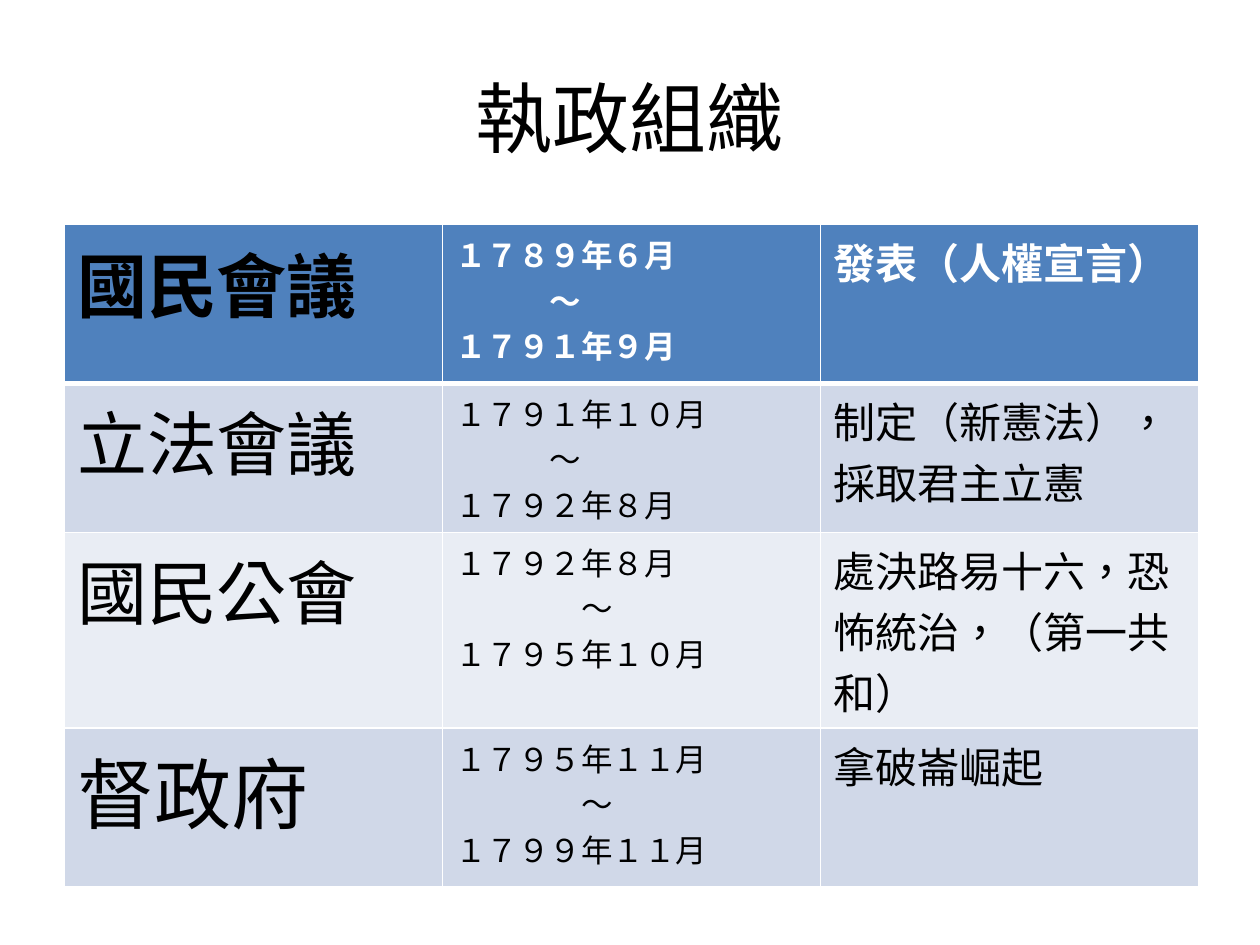
from dataclasses import dataclass

from lxml import etree
from pptx import Presentation
from pptx.dml.color import RGBColor
from pptx.enum import text
from pptx.oxml import ns
from pptx.util import Cm, Pt


@dataclass(frozen=True)
class Theme:
    font: str = "Noto Sans CJK SC"
    language: str = "zh-TW"
    black: str = "000000"
    white: str = "FFFFFF"
    header_fill: str = "4F81BD"
    band_fills: tuple = ("D0D8E8", "E9EDF4")
    title_size: int = 44
    name_size: int = 40
    last_name_size: int = 44
    date_size: int = 18
    event_size: int = 24
    border: int = 1
    header_border: int = 3


THEME = Theme()
ROWS = [
    ("國民會議", "１７８９年６月", "１７９１年９月", "發表（人權宣言）"),
    ("立法會議", "１７９１年１０月", "１７９２年８月", "制定（新憲法），採取君主立憲"),
    ("國民公會", "１７９２年８月", "１７９５年１０月", "處決路易十六，恐怖統治，（第一共和）"),
    ("督政府", "１７９５年１１月", "１７９９年１１月", "拿破崙崛起"),
]
ROW_HEIGHTS = (3.2, 3.0, 3.95, 3.2)
TILDE_INDENTS = (3, 3, 4, 4)


def format_text(text_frame, size, color, bold=False):
    for paragraph in text_frame.paragraphs:
        for run in paragraph.runs:
            run.font.size = Pt(size)
            run.font.bold = bold
            run.font.name = THEME.font
            run.font.color.rgb = RGBColor.from_string(color)
            properties = run.font._element
            properties.set("lang", THEME.language)
            east_asian = etree.SubElement(properties, ns.qn("a:ea"))
            east_asian.set("typeface", THEME.font)


def add_title(slide, title):
    shape = slide.shapes.add_textbox(Cm(1.27), Cm(0.76), Cm(22.86), Cm(3.18))
    text_frame = shape.text_frame
    text_frame.word_wrap = True
    text_frame.vertical_anchor = text.MSO_ANCHOR.MIDDLE
    text_frame.text = title
    text_frame.paragraphs[0].alignment = text.PP_ALIGN.CENTER
    format_text(text_frame, THEME.title_size, THEME.black)


def set_borders(cell, top, bottom):
    properties = cell._tc.get_or_add_tcPr()
    widths = {"L": THEME.border, "R": THEME.border, "T": top, "B": bottom}
    for side, width in widths.items():
        line = etree.SubElement(properties, ns.qn(f"a:ln{side}"), w=str(Pt(width)))
        fill = etree.SubElement(line, ns.qn("a:solidFill"))
        etree.SubElement(fill, ns.qn("a:srgbClr"), val=THEME.white)


def style_cell(cell, row_index):
    top = THEME.header_border if row_index == 1 else THEME.border
    bottom = THEME.header_border if row_index == 0 else THEME.border
    set_borders(cell, top, bottom)
    color = THEME.band_fills[(row_index - 1) % 2] if row_index else THEME.header_fill
    cell.fill.solid()
    cell.fill.fore_color.rgb = RGBColor.from_string(color)


def indent_paragraph(paragraph, characters):
    properties = paragraph._p.get_or_add_pPr()
    properties.set("marL", str(Pt(characters * THEME.date_size)))
    properties.set("indent", "0")


def fill_row(cells, row_index, content):
    name, start, end, event = content
    is_header = row_index == 0
    text_color = THEME.white if is_header else THEME.black
    is_last = row_index == len(ROWS) - 1
    name_size = THEME.last_name_size if is_last else THEME.name_size
    columns = (
        (name, name_size, THEME.black),
        (f"{start}\n～\n{end}", THEME.date_size, text_color),
        (event, THEME.event_size, text_color),
    )
    for cell, (words, size, color) in zip(cells, columns):
        cell.text_frame.text = words
        format_text(cell.text_frame, size, color, is_header)
        style_cell(cell, row_index)
    indent_paragraph(cells[1].text_frame.paragraphs[1], TILDE_INDENTS[row_index])


def add_period_table(slide):
    frame = slide.shapes.add_table(
        len(ROWS), 3, Cm(1.3), Cm(4.53), Cm(22.86), Cm(sum(ROW_HEIGHTS))
    )
    table = frame.table
    for column in table.columns:
        column.width = Cm(7.62)
    for row_index, (row, height) in enumerate(zip(table.rows, ROW_HEIGHTS)):
        row.height = Cm(height)
        fill_row(list(row.cells), row_index, ROWS[row_index])


def main():
    presentation = Presentation()
    presentation.slide_width = Cm(25.4)
    presentation.slide_height = Cm(19.05)
    slide = presentation.slides.add_slide(presentation.slide_layouts[6])
    add_title(slide, "執政組織")
    add_period_table(slide)
    presentation.save("out.pptx")


if __name__ == "__main__":
    main()
